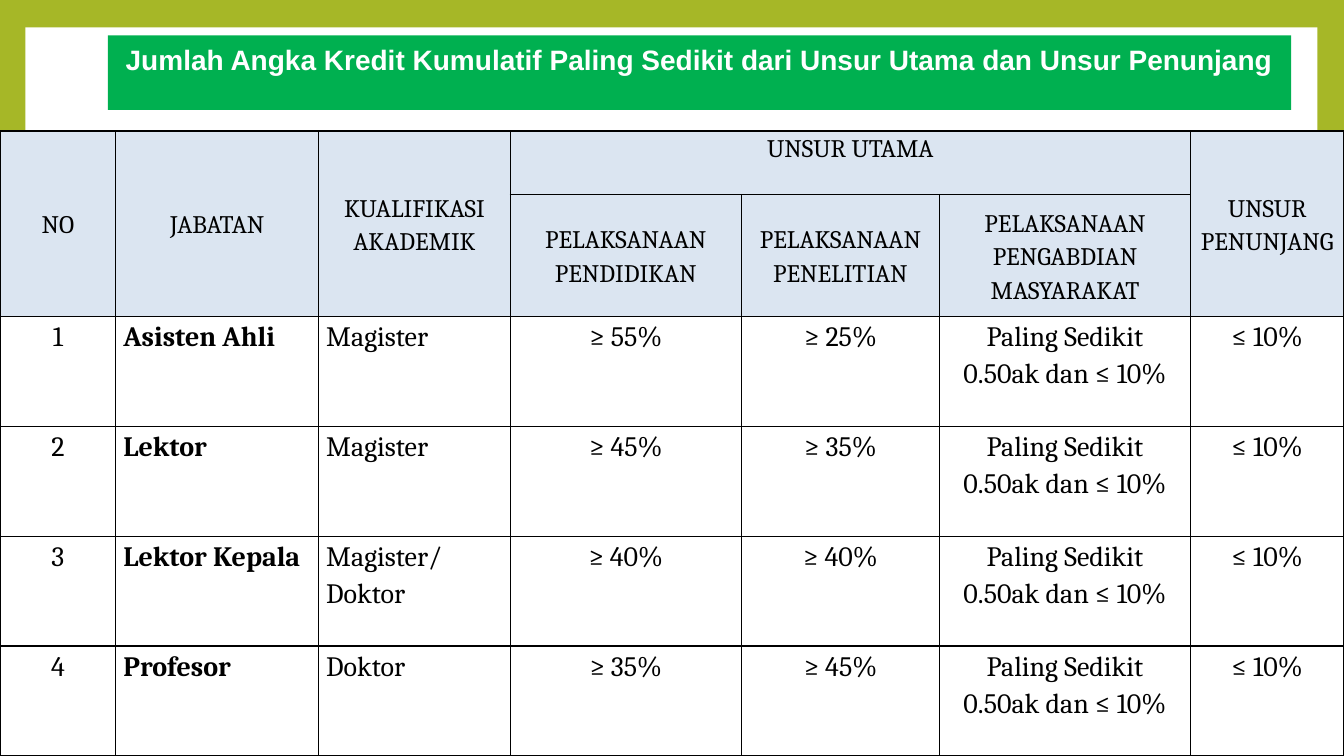
"""Build the slide on minimum cumulative credit shares per academic position."""
from lxml.etree import SubElement
from pptx import Presentation
from pptx.dml.color import RGBColor
from pptx.enum.shapes import MSO_SHAPE as Shape
from pptx.enum.text import MSO_ANCHOR as Anchor, PP_ALIGN as Align
from pptx.oxml.ns import qn
from pptx.util import Cm, Pt


def paint(fill, color):
    fill.solid()
    fill.fore_color.rgb = RGBColor.from_string(color)


def write(frame, text, size=20, font="Cambria", color="000000", bold=False,
          align=Align.CENTER, spacing=1.15):
    for index, line in enumerate(text.split("\n")):
        para = frame.add_paragraph() if index else frame.paragraphs[0]
        para.alignment = align
        para.line_spacing = spacing
        span = para.add_run()
        span.text = line
        span.font.size = Pt(size)
        span.font.name = font
        span.font.bold = bold
        paint(span.font.fill, color)


deck = Presentation()
deck.slide_width, deck.slide_height = Cm(33.87), Cm(19.05)
page = deck.slides.add_slide(deck.slide_layouts[6])
paint(page.background.fill, "A6B727")

panel = page.shapes.add_shape(Shape.RECTANGLE, Cm(0.64), Cm(0.69), Cm(32.56), Cm(17.7))
paint(panel.fill, "FFFFFF")
panel.line.fill.background()
panel.shadow.inherit = False

column_widths = [2.92, 5.11, 4.83, 5.82, 5, 6.32, 3.87]
row_heights = [1.6, 3.07] + [2.77] * 4
grid = page.shapes.add_table(len(row_heights), len(column_widths), 0, Cm(3.3),
                             Cm(sum(column_widths)), Cm(sum(row_heights))).table
for column, width in zip(grid.columns, column_widths):
    column.width = Cm(width)
for row, height in zip(grid.rows, row_heights):
    row.height = Cm(height)

for row_index, row in enumerate(grid.rows):
    for cell in row.cells:
        cell.margin_left = cell.margin_right = Cm(0.19)
        cell.margin_top = cell.margin_bottom = 0
        properties = cell._tc.get_or_add_tcPr()
        for side in ("a:lnL", "a:lnR", "a:lnT", "a:lnB"):
            border = SubElement(properties, qn(side), w=str(Pt(1)))
            border_fill = SubElement(border, qn("a:solidFill"))
            SubElement(border_fill, qn("a:srgbClr"), val="000000")
        paint(cell.fill, "DBE5F1" if row_index < 2 else "FFFFFF")

for column_index in (0, 1, 2, 6):
    grid.cell(0, column_index).merge(grid.cell(1, column_index))
grid.cell(0, 3).merge(grid.cell(0, 5))

headings = [
    (0, 0, "NO"),
    (0, 1, "JABATAN"),
    (0, 2, "KUALIFIKASI AKADEMIK"),
    (0, 3, "UNSUR UTAMA"),
    (0, 6, "UNSUR PENUNJANG"),
    (1, 3, "PELAKSANAAN PENDIDIKAN"),
    (1, 4, "PELAKSANAAN PENELITIAN"),
    (1, 5, "PELAKSANAAN PENGABDIAN MASYARAKAT"),
]
for row_index, column_index, heading in headings:
    cell = grid.cell(row_index, column_index)
    cell.vertical_anchor = Anchor.TOP if heading == "UNSUR UTAMA" else Anchor.MIDDLE
    write(cell.text_frame, heading, size=18)

positions = [
    ("Asisten Ahli", "Magister", 55, 25),
    ("Lektor", "Magister", 45, 35),
    ("Lektor Kepala", "Magister/\nDoktor", 40, 40),
    ("Profesor", "Doktor", 35, 45),
]
for number, (position, degree, teaching, research) in enumerate(positions, 1):
    texts = [str(number), position, degree, f"≥ {teaching}%", f"≥ {research}%",
             "Paling Sedikit 0.50ak dan ≤ 10%", "≤ 10%"]
    for column_index, text in enumerate(texts):
        write(grid.cell(number + 1, column_index).text_frame, text,
              bold=column_index == 1,
              align=Align.LEFT if column_index in (1, 2) else Align.CENTER)

banner = page.shapes.add_shape(Shape.RECTANGLE, Cm(2.72), Cm(0.89), Cm(29.82), Cm(1.88))
paint(banner.fill, "00B050")
banner.line.fill.background()
banner.shadow.inherit = False
banner.text_frame.word_wrap = True
banner.text_frame.vertical_anchor = Anchor.TOP
banner.text_frame.margin_top = Cm(0.17)
write(banner.text_frame,
      "Jumlah Angka Kredit Kumulatif Paling Sedikit dari Unsur Utama dan Unsur Penunjang",
      font="Arial", color="FFFFFF", bold=True, spacing=1.0)

deck.save("out.pptx")
